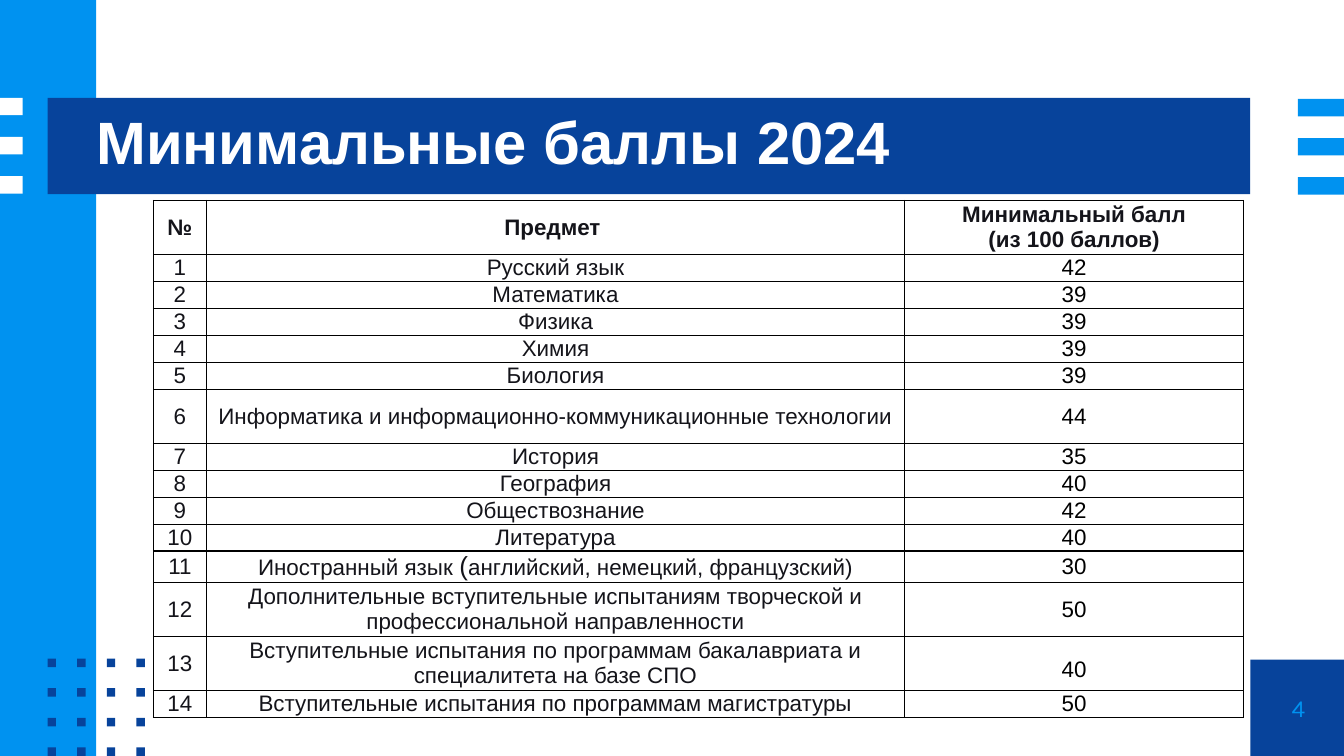
from lxml import etree
from pptx import Presentation
from pptx.dml.color import RGBColor
from pptx.enum.shapes import MSO_SHAPE
from pptx.enum.text import MSO_ANCHOR, PP_ALIGN
from pptx.oxml.ns import qn
from pptx.util import Cm, Pt

NAVY = RGBColor(0x07, 0x43, 0x9B)
BLUE = RGBColor(0x00, 0x92, 0xF0)
WHITE = RGBColor(0xFF, 0xFF, 0xFF)
INK = RGBColor(0x14, 0x14, 0x1A)
BLACK = RGBColor(0x00, 0x00, 0x00)
RECTANGLE = MSO_SHAPE.RECTANGLE
MIDDLE = MSO_ANCHOR.MIDDLE
LEFT, CENTER = PP_ALIGN.LEFT, PP_ALIGN.CENTER

deck = Presentation()
deck.slide_width, deck.slide_height = Cm(25.4), Cm(14.29)
page = deck.slides.add_slide(deck.slide_layouts[6])


def add_block(left, top, width, height, color):
    block = page.shapes.add_shape(RECTANGLE, Cm(left), Cm(top), Cm(width), Cm(height))
    block.fill.solid()
    block.fill.fore_color.rgb = color
    block.line.fill.background()
    block.shadow.inherit = False


def add_label(left, top, width, height, text, font, size, color, align):
    box = page.shapes.add_textbox(Cm(left), Cm(top), Cm(width), Cm(height))
    frame = box.text_frame
    frame.word_wrap = True
    frame.vertical_anchor = MIDDLE
    frame.margin_left = frame.margin_right = frame.margin_top = frame.margin_bottom = 0
    para = frame.paragraphs[0]
    para.text = text
    para.alignment = align
    para.font.name, para.font.size = font, Pt(size)
    para.font.color.rgb = color
    return para


# Page number corner, side stripe and title band
add_block(23.63, 12.47, 1.82, 1.82, NAVY)
add_block(0, 0, 1.82, 14.29, BLUE)
add_block(0.9, 1.85, 22.73, 1.82, NAVY)

# Three bars on each side of the title band
for index in range(3):
    top = 1.85 + 0.74 * index
    add_block(0, top, 0.43, 0.33, WHITE)
    add_block(24.53, top + 0.02, 0.87, 0.33, BLUE)

# Grid of dots
for row in range(4):
    for column in range(4):
        add_block(0.9 + 0.56 * column, 12.45 + 0.56 * row, 0.16, 0.16, NAVY)

# Page number and title
add_label(23.63, 12.47, 1.82, 1.82, "4", "Karla", 13, BLUE, CENTER)
title = add_label(1.82, 1.55, 21.8, 2.39, "Минимальные баллы 2024", "Arial", 32, WHITE, LEFT)
title.font.bold = True
title.line_spacing = 0.9

# Table of minimum scores
SUBJECTS = [
    ("Русский язык", 42),
    ("Математика", 39),
    ("Физика", 39),
    ("Химия", 39),
    ("Биология", 39),
    ("Информатика и информационно-коммуникационные технологии", 44),
    ("История", 35),
    ("География", 40),
    ("Обществознание", 42),
    ("Литература", 40),
    ("Иностранный язык (английский, немецкий, французский)", 30),
    ("Дополнительные вступительные испытаниям творческой и "
     "профессиональной направленности", 50),
    ("Вступительные испытания по программам бакалавриата и "
     "специалитета на базе СПО", 40),
    ("Вступительные испытания по программам магистратуры", 50),
]
rows = [("№", "Предмет ", "Минимальный балл\n(из 100 баллов)")]
rows += [(str(number), subject, str(score))
         for number, (subject, score) in enumerate(SUBJECTS, start=1)]
COLUMN_WIDTHS = [1.0, 13.2, 6.4]
ROW_HEIGHT = 0.51
SPECIAL_HEIGHTS = {0: 0.95, 6: 1.02, 11: 0.59, 12: 1.02, 13: 1.02}
heights = [SPECIAL_HEIGHTS.get(index, ROW_HEIGHT) for index in range(len(rows))]

table = page.shapes.add_table(len(rows), len(COLUMN_WIDTHS), Cm(2.9), Cm(3.79),
                              Cm(sum(COLUMN_WIDTHS)), Cm(sum(heights))).table
table.first_row = table.horz_banding = False
for column, width in zip(table.columns, COLUMN_WIDTHS):
    column.width = Cm(width)

for row_index, texts in enumerate(rows):
    table.rows[row_index].height = Cm(heights[row_index])
    for column_index, text in enumerate(texts):
        cell = table.cell(row_index, column_index)
        cell.text = text
        cell.vertical_anchor = MIDDLE
        cell.margin_left = cell.margin_right = Cm(0.2)
        cell.margin_top = cell.margin_bottom = 0
        for para in cell.text_frame.paragraphs:
            para.alignment = CENTER
            para.font.name, para.font.size = "Arial", Pt(12)
            para.font.bold = row_index == 0
            para.font.color.rgb = BLACK if row_index and column_index == 2 else INK

        # Thin black borders, which come before the fill in the cell properties
        properties = cell._tc.get_or_add_tcPr()
        for side in ("a:lnL", "a:lnR", "a:lnT", "a:lnB"):
            border = etree.SubElement(properties, qn(side), w=str(Pt(0.75)))
            paint = etree.SubElement(border, qn("a:solidFill"))
            etree.SubElement(paint, qn("a:srgbClr"), val=str(BLACK))
        cell.fill.background()

# Larger opening bracket in the foreign language row
para = table.cell(11, 1).text_frame.paragraphs[0]
before, after = para.text.split("(")
para.runs[0].text = before
for text, size in (("(", 14), (after, 12)):
    span = para.add_run()
    span.text = text
    span.font.size = Pt(size)

# Looser line for the score in row 13
table.cell(13, 2).text_frame.paragraphs[0].line_spacing = 1.5

deck.save("out.pptx")
